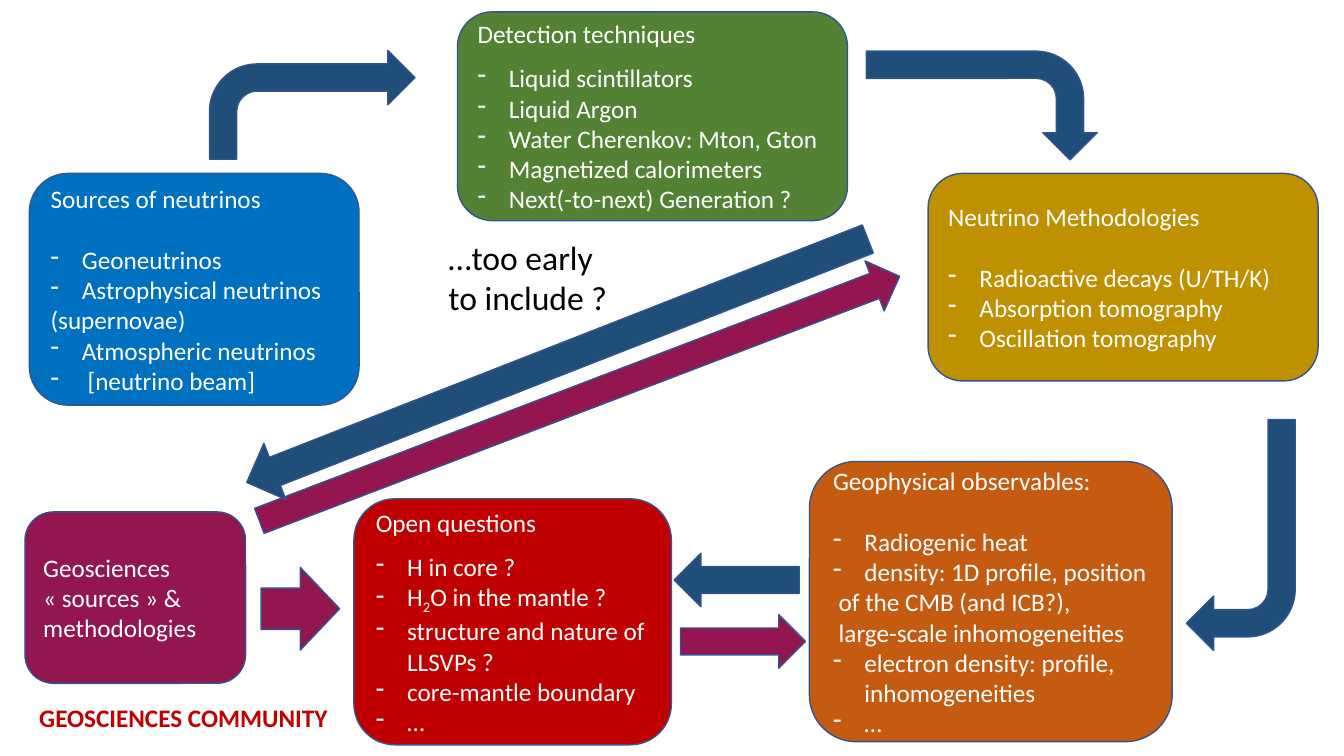
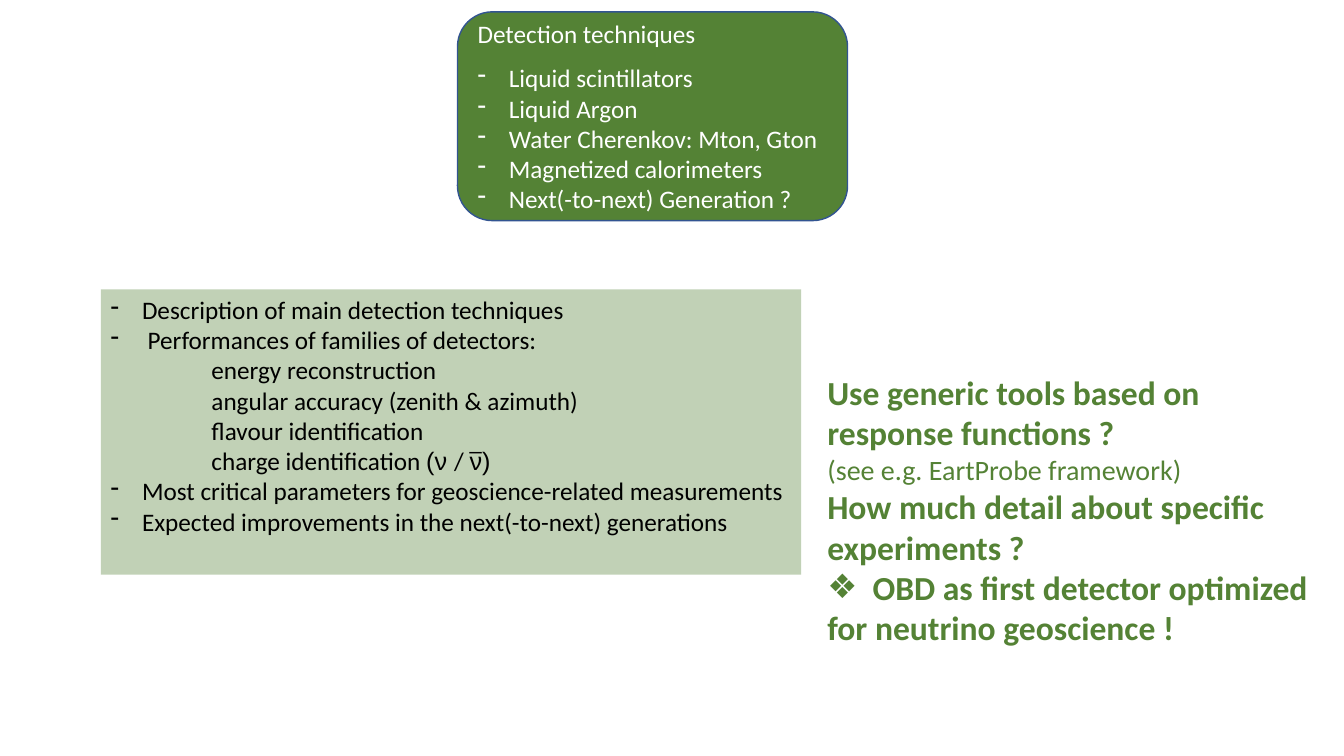
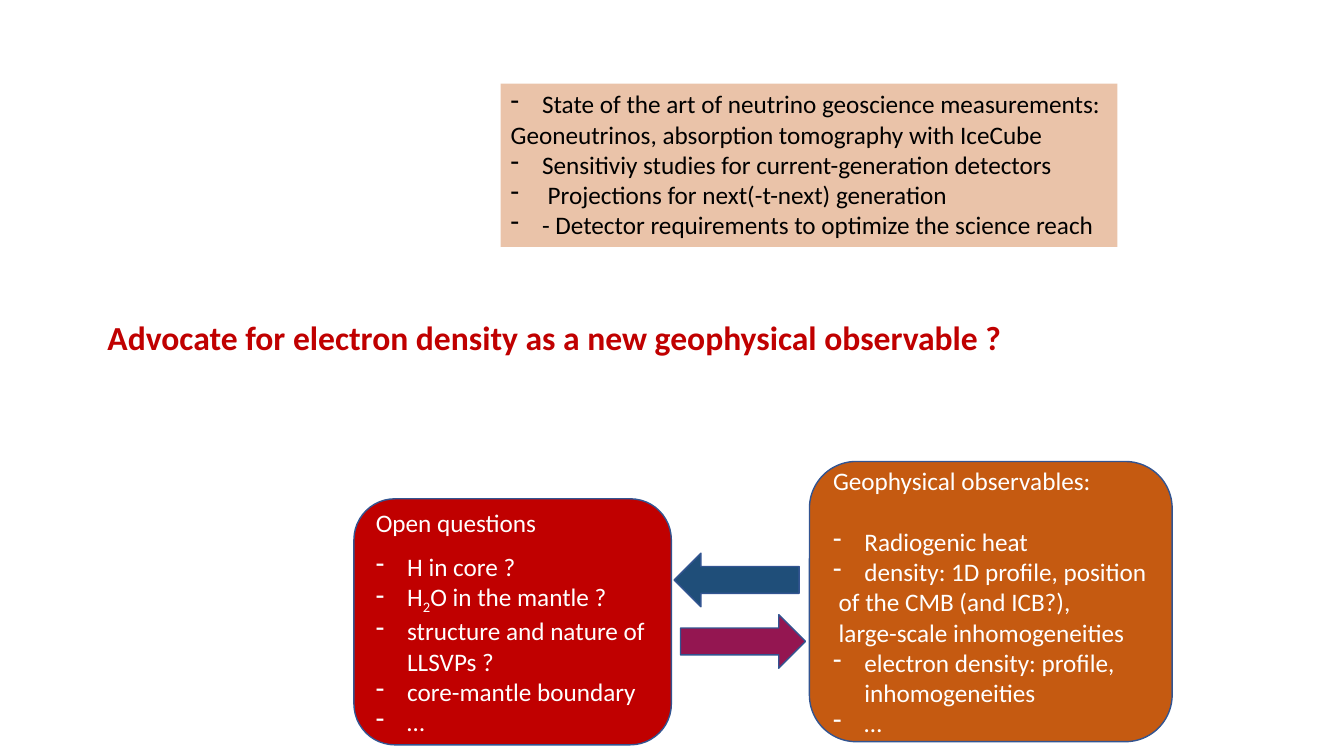
from dataclasses import dataclass

from lxml.etree import SubElement
from pptx import Presentation
from pptx.dml.color import RGBColor
from pptx.enum.shapes import MSO_SHAPE
from pptx.enum.text import MSO_ANCHOR, MSO_AUTO_SIZE, PP_ALIGN
from pptx.oxml.ns import qn
from pptx.util import Cm, Pt

COLOURS = {
    "outline": "325491",
    "navy": "1F4E79",
    "plum": "941651",
    "blue": "0070C0",
    "gold": "BF9000",
    "orange": "C55A11",
    "red": "C00000",
    "green": "548235",
    "white": "FFFFFF",
    "black": "000000",
}
FONT = "Calibri"
BULLET_INDENT = 0.79
WIDE_GAP, NARROW_GAP = 22, 10  # points below a card heading
DETECTION_BOX = (11.53, 0.3, 9.83, 5.26)
EXCHANGE_BOX = (8.92, 11.63, 20.62, 7.14)


@dataclass
class Line:
    """One paragraph; text is a string or a list of (string, style) pairs."""
    text: object
    mark: str = ""
    indent: float = 0
    size: int = 18
    bold: bool = False
    gap: int = 0


def bullets(*texts):
    return [Line(text, "-", BULLET_INDENT) for text in texts]


def headlines(*texts):
    return [Line(text, size=24, bold=True) for text in texts]


def colour(name):
    return RGBColor.from_string(COLOURS[name])


def place(box):
    return [Cm(length) for length in box]


def set_indent(para, line):
    """Left margin, with a hanging bullet when the line has a mark."""
    properties = para._p.get_or_add_pPr()
    properties.set("marL", str(Cm(line.indent)))
    properties.set("indent", str(Cm(-line.indent if line.mark else 0)))
    if line.mark == "-":
        SubElement(properties, qn("a:buFontTx"))
    elif line.mark:
        SubElement(properties, qn("a:buFont")).set("typeface", "Arial")
    if line.mark:
        SubElement(properties, qn("a:buChar")).set("char", line.mark)


def write(frame, lines, text_colour):
    for number, line in enumerate(lines):
        para = frame.paragraphs[0] if number == 0 else frame.add_paragraph()
        set_indent(para, line)
        para.alignment = PP_ALIGN.LEFT
        para.space_after = Pt(line.gap)
        para.font.name = FONT
        para.font.size = Pt(line.size)
        para.font.bold = line.bold
        para.font.color.rgb = colour(text_colour)
        parts = [(line.text, "")] if isinstance(line.text, str) else line.text
        for text, style in parts:
            span = para.add_run()
            span.text = text
            if style == "subscript":
                span._r.get_or_add_rPr().set("baseline", "-25000")
            elif style:
                span.font.name = style


def add_outlined(page, kind, box, fill):
    shape = page.shapes.add_shape(kind, *place(box))
    shape.shadow.inherit = False
    shape.fill.solid()
    shape.fill.fore_color.rgb = colour(fill)
    shape.line.color.rgb = colour("outline")
    shape.line.width = Pt(1)
    return shape


def add_card(page, box, fill, lines):
    card = add_outlined(page, MSO_SHAPE.ROUNDED_RECTANGLE, box, fill)
    card.text_frame.word_wrap = True
    card.text_frame.vertical_anchor = MSO_ANCHOR.MIDDLE
    write(card.text_frame, lines, "white")


def add_arrow(page, kind, box, fill, rotation=0):
    add_outlined(page, kind, box, fill).rotation = rotation


def add_label(page, box, lines, text_colour):
    label = page.shapes.add_textbox(*place(box))
    label.text_frame.word_wrap = False
    label.text_frame.auto_size = MSO_AUTO_SIZE.SHAPE_TO_FIT_TEXT
    write(label.text_frame, lines, text_colour)


def add_notes_panel(page, box, tint, lines):
    """Black text on a see-through tint."""
    panel = page.shapes.add_textbox(*place(box))
    panel.fill.solid()
    panel.fill.fore_color.rgb = colour(tint)
    tint_element = panel._element.spPr.find(".//" + qn("a:srgbClr"))
    SubElement(tint_element, qn("a:alpha")).set("val", "36000")
    panel.text_frame.word_wrap = True
    write(panel.text_frame, lines, "black")


def add_detection_card(page, box):
    add_card(page, box, "green", [
        Line("Detection techniques", gap=NARROW_GAP),
        *bullets("Liquid scintillators", "Liquid Argon",
                 "Water Cherenkov: Mton, Gton", "Magnetized calorimeters",
                 "Next(-to-next) Generation ?"),
    ])


def add_exchange(page, box):
    """Observables and open questions, with the arrows between them."""
    left, top, width, height = box
    add_card(page, (left + 11.48, top, width - 11.48, 7.06), "orange", [
        Line("Geophysical observables:", gap=WIDE_GAP),
        *bullets("Radiogenic heat", "density: 1D profile, position"),
        Line(" of the CMB (and ICB?),"),
        Line(" large-scale inhomogeneities"),
        *bullets("electron density: profile, inhomogeneities", "…"),
    ])
    add_card(page, (left, top + 0.94, 8, height - 0.94), "red", [
        Line("Open questions", gap=NARROW_GAP),
        *bullets("H in core ?",
                 [("H", ""), ("2", "subscript"), ("O in the mantle ?", "")],
                 "structure and nature of LLSVPs ?",
                 "core-mantle boundary", "…"),
    ])
    add_arrow(page, MSO_SHAPE.LEFT_ARROW,
              (left + 8.07, top + 2.31, 3.15, 1.35), "navy")
    add_arrow(page, MSO_SHAPE.RIGHT_ARROW,
              (left + 8.23, top + 3.86, 3.15, 1.35), "plum")


def build_overview(page):
    # Neutrino cards
    add_card(page, (0.74, 4.37, 8.31, 5.84), "blue", [
        Line("Sources of neutrinos", gap=WIDE_GAP),
        *bullets("Geoneutrinos", "Astrophysical neutrinos"),
        Line("(supernovae)"),
        *bullets("Atmospheric neutrinos", " [neutrino beam]"),
    ])
    add_card(page, (23.39, 4.37, 9.83, 5.23), "gold", [
        Line("Neutrino Methodologies", gap=WIDE_GAP),
        *bullets("Radioactive decays (U/TH/K)", "Absorption tomography",
                 "Oscillation tomography"),
    ])
    add_detection_card(page, DETECTION_BOX)
    # Geoscience cards
    add_exchange(page, EXCHANGE_BOX)
    add_card(page, (0.63, 12.9, 5.56, 4.32), "plum", [
        Line("Geosciences"), Line("« sources » & methodologies"),
    ])
    # Arrows around the cycle
    add_arrow(page, MSO_SHAPE.BENT_ARROW, (5.28, 1.27, 5.18, 2.74), "navy")
    add_arrow(page, MSO_SHAPE.BENT_ARROW, (23.37, -0.25, 2.74, 5.82), "navy", 90)
    add_arrow(page, MSO_SHAPE.BENT_ARROW, (29.9, 10.57, 2.74, 5.82), "navy", 180)
    add_arrow(page, MSO_SHAPE.RIGHT_ARROW, (6.58, 14.3, 1.98, 2.08), "plum")
    # Long diagonal arrows
    add_arrow(page, MSO_SHAPE.RIGHT_ARROW, (5.97, 9.37, 17.27, 1.35), "plum", 339.1)
    add_arrow(page, MSO_SHAPE.LEFT_ARROW, (5.64, 8.33, 16.81, 1.52), "navy", 338.6)
    # Labels
    add_label(page, (0.74, 17.58, 7.85, 1.02),
              [Line("GEOSCIENCES COMMUNITY", bold=True)], "red")
    add_label(page, (11.05, 5.84, 4.55, 2.31),
              [Line("…too early", size=24), Line("to include ?", size=24)], "black")


def build_detection(page):
    add_detection_card(page, DETECTION_BOX)
    # Topics, with the bar over the antineutrino
    charge = [("charge identification ", ""), ("(ν ", "Arial"), ("/ ", ""),
              ("ν)", "Arial")]
    performances = ["energy reconstruction",
                    "angular accuracy (zenith & azimuth)",
                    "flavour identification", charge]
    add_notes_panel(page, (2.54, 7.29, 17.65, 7.19), "green", [
        *bullets("Description of main detection techniques",
                 " Performances of families of detectors:"),
        *[Line(text, indent=2.54) for text in performances],
        *bullets("Most critical parameters for geoscience-related measurements",
                 "Expected improvements in the next(-to-next) generations"),
    ])
    add_label(page, (11.58, 10.59, 0.84, 1.02), [Line("_")], "black")
    # Points to discuss
    add_label(page, (20.6, 9.25, 12.75, 7.26), [
        *headlines("Use generic tools based on", "response functions ?"),
        Line("(see e.g. EartProbe framework)", size=20),
        *headlines("How much detail about specific", "experiments ?"),
        Line(" OBD as first detector optimized", "❖", 0.95, 24, True),
        *headlines("for neutrino geoscience !"),
    ], "green")


def build_observables(page):
    add_exchange(page, EXCHANGE_BOX)
    add_notes_panel(page, (12.62, 2.11, 15.54, 4.11), "orange", [
        *bullets("State of the art of neutrino geoscience measurements:"),
        Line("Geoneutrinos, absorption tomography with IceCube"),
        *bullets("Sensitiviy studies for current-generation detectors",
                 " Projections for next(-t-next) generation",
                 "- Detector requirements to optimize the science reach"),
    ])
    add_label(page, (2.46, 7.85, 23.27, 1.27), headlines(
        "Advocate for electron density as a new geophysical observable ?"), "red")


def main():
    deck = Presentation()
    deck.slide_width, deck.slide_height = Cm(33.87), Cm(19.05)
    blank = deck.slide_layouts.get_by_name("Blank")
    for build in (build_overview, build_detection, build_observables):
        build(deck.slides.add_slide(blank))
    deck.save("out.pptx")


if __name__ == "__main__":
    main()
